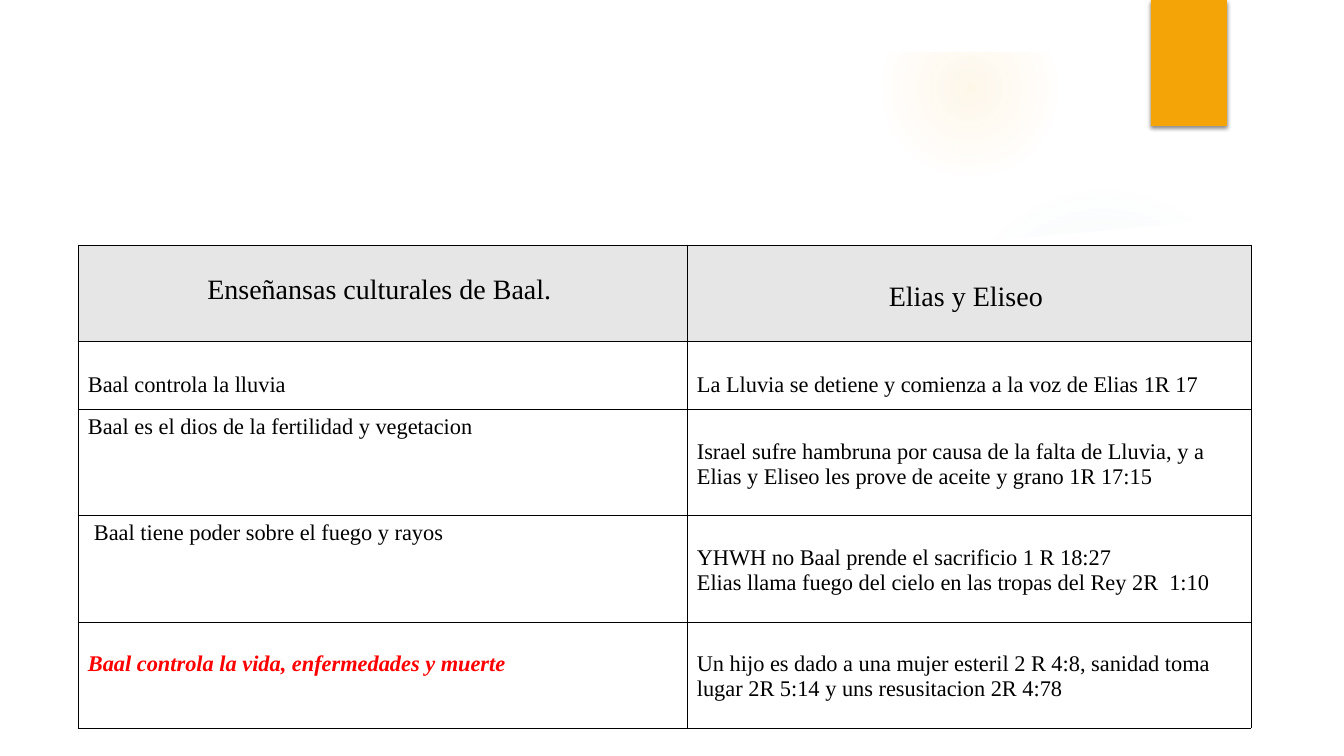
from typing import NamedTuple

from lxml.etree import SubElement
from pptx import Presentation
from pptx.dml.color import RGBColor
from pptx.enum.shapes import MSO_SHAPE as Preset
from pptx.enum.text import MSO_ANCHOR as Anchor, PP_ALIGN as Align
from pptx.oxml import parse_xml
from pptx.oxml.ns import nsdecls, qn
from pptx.util import Emu, Pt

EMU_PER_PX = 914400 / 100.8
FONT = "Times New Roman"
WHITE, BLACK, RED, GREY, AMBER = "FFFFFF", "000000", "FF0000", "E6E6E6", "F5A408"


class Glow(NamedTuple):
    left: int
    top: int
    size: int
    color: str
    stops: tuple[tuple[int, int], ...]  # position and opacity, in percent


class CellText(NamedTuple):
    lines: tuple[str, ...]
    top: int = 31
    left: int = 10
    right: int = 10
    size: int = 16
    color: str = BLACK
    emphasis: bool = False
    align: Align = Align.LEFT
    fill: str | None = None


def header(text: str, top: int) -> CellText:
    return CellText((text,), top, right=16, size=20, align=Align.CENTER, fill=GREY)


GLOWS = (
    Glow(949, 184, 310, "8EBBD2", ((0, 7), (36, 6), (69, 0))),
    Glow(882, 0, 176, "FAC96A", ((0, 14), (36, 7), (73, 0))),
)
SWOOSH_OUTLINE = (
    (941, 252), (1111, 240), (1299, 216), (1293, 167), (1211, 190),
    (1130, 210), (1050, 226), (937, 245),
)
PANEL_OUTLINE = (
    (50, 206), (218, 226), (404, 240), (588, 248), (714, 250), (874, 247),
    (984, 241), (1068, 234), (1153, 226), (1238, 215), (1294, 206),
    (1294, 706), (50, 706),
)
COLUMN_WIDTHS = (609, 564)
ROW_HEIGHTS = (96, 68, 106, 107, 106)
ROWS = (
    (header("Enseñansas culturales de Baal.", 29), header("Elias y Eliseo", 36)),
    (CellText(("Baal controla la lluvia",)),
     CellText(("La Lluvia se detiene y comienza a la voz de Elias 1R 17",))),
    (CellText(("Baal es el dios de la fertilidad y vegetacion",), top=6),
     CellText(("Israel sufre hambruna por causa de la falta de Lluvia, y a "
               "Elias y Eliseo les prove de aceite y grano 1R 17:15",))),
    (CellText(("Baal tiene poder sobre el fuego y rayos",), top=6, left=16),
     CellText(("YHWH no Baal prende el sacrificio 1 R 18:27",
               "Elias llama fuego del cielo en las tropas del Rey 2R  1:10"))),
    (CellText(("Baal controla la vida, enfermedades y muerte",), top=30,
              color=RED, emphasis=True),
     CellText(("Un hijo es dado a una mujer esteril 2 R 4:8, sanidad toma "
               "lugar 2R 5:14 y uns resusitacion 2R 4:78",), top=30)),
)


def px(length: int) -> Emu:
    return Emu(round(length * EMU_PER_PX))


def rgb(color: str) -> RGBColor:
    return RGBColor.from_string(color)


def paint(shape, color: str) -> None:
    shape.shadow.inherit = False
    shape.fill.solid()
    shape.fill.fore_color.rgb = rgb(color)
    shape.line.fill.background()


def add_block(slide, preset: Preset, left: int, top: int, width: int,
              height: int, color: str):
    shape = slide.shapes.add_shape(preset, px(left), px(top), px(width), px(height))
    paint(shape, color)
    return shape


def add_glow(slide, glow: Glow) -> None:
    shape = add_block(slide, Preset.OVAL, glow.left, glow.top, glow.size,
                      glow.size, glow.color)
    stops = "".join(
        f'<a:gs pos="{position * 1000}"><a:srgbClr val="{glow.color}">'
        f'<a:alpha val="{opacity * 1000}"/></a:srgbClr></a:gs>'
        for position, opacity in glow.stops)
    gradient = parse_xml(
        f'<a:gradFill {nsdecls("a")}><a:gsLst>{stops}</a:gsLst><a:path path="circle">'
        '<a:fillToRect l="50000" t="50000" r="50000" b="50000"/></a:path></a:gradFill>')
    properties = shape.element.spPr
    properties.replace(properties.find(qn("a:solidFill")), gradient)


def add_white_outline(slide, outline: tuple[tuple[int, int], ...],
                      opacity: int = 100) -> None:
    builder = slide.shapes.build_freeform(*outline[0], scale=EMU_PER_PX)
    builder.add_line_segments(outline[1:], close=True)
    shape = builder.convert_to_shape()
    paint(shape, WHITE)
    if opacity < 100:
        color = shape.element.spPr.find(qn("a:solidFill"))[0]
        SubElement(color, qn("a:alpha"), val=str(opacity * 1000))


def add_bookmark(slide) -> None:
    shape = add_block(slide, Preset.RECTANGLE, 1151, 0, 76, 126, AMBER)
    effects = shape.element.spPr.find(qn("a:effectLst"))
    effects.append(parse_xml(
        f'<a:outerShdw {nsdecls("a")} blurRad="{Pt(3)}" dist="{Pt(2)}" dir="5400000" '
        'rotWithShape="0"><a:srgbClr val="000000"><a:alpha val="45000"/>'
        '</a:srgbClr></a:outerShdw>'))


def write_text(frame, lines: tuple[str, ...], *, size: int, color: str,
               emphasis: bool, align: Align) -> None:
    for index, line in enumerate(lines):
        paragraph = frame.add_paragraph() if index else frame.paragraphs[0]
        paragraph.alignment = align
        run = paragraph.add_run()
        run.text = line
        font = run.font
        font.name, font.size, font.color.rgb = FONT, Pt(size), rgb(color)
        font.bold = font.italic = emphasis


def add_borders(cell) -> None:
    properties = cell._tc.get_or_add_tcPr()
    for index, side in enumerate(("lnL", "lnR", "lnT", "lnB")):
        line = parse_xml(f'<a:{side} {nsdecls("a")} w="{Pt(0.6)}"/>')
        fill = SubElement(line, qn("a:solidFill"))
        SubElement(fill, qn("a:srgbClr"), val=BLACK)
        properties.insert(index, line)


def fill_cell(cell, content: CellText) -> None:
    cell.margin_left, cell.margin_right = px(content.left), px(content.right)
    cell.margin_top, cell.margin_bottom = px(content.top), px(5)
    cell.vertical_anchor = Anchor.TOP
    if content.fill:
        cell.fill.solid()
        cell.fill.fore_color.rgb = rgb(content.fill)
    else:
        cell.fill.background()
    write_text(cell.text_frame, content.lines, size=content.size,
               color=content.color, emphasis=content.emphasis, align=content.align)
    add_borders(cell)


def add_comparison(slide) -> None:
    table = slide.shapes.add_table(
        len(ROWS), len(COLUMN_WIDTHS), px(78), px(245),
        px(sum(COLUMN_WIDTHS)), px(sum(ROW_HEIGHTS))).table
    table.first_row = table.horz_banding = False
    for column, width in zip(table.columns, COLUMN_WIDTHS):
        column.width = px(width)
    for row, height, contents in zip(table.rows, ROW_HEIGHTS, ROWS):
        row.height = px(height)
        for cell, content in zip(row.cells, contents):
            fill_cell(cell, content)


def main() -> None:
    presentation = Presentation()
    presentation.slide_width, presentation.slide_height = px(1344), px(756)
    slide = presentation.slides.add_slide(presentation.slide_layouts[6])
    for glow in GLOWS:
        add_glow(slide, glow)
    add_white_outline(slide, SWOOSH_OUTLINE, opacity=20)
    add_white_outline(slide, PANEL_OUTLINE)
    add_block(slide, Preset.RECTANGLE, 0, 0, 1344, 52, WHITE)
    add_bookmark(slide)
    add_comparison(slide)
    presentation.save("out.pptx")


if __name__ == "__main__":
    main()
